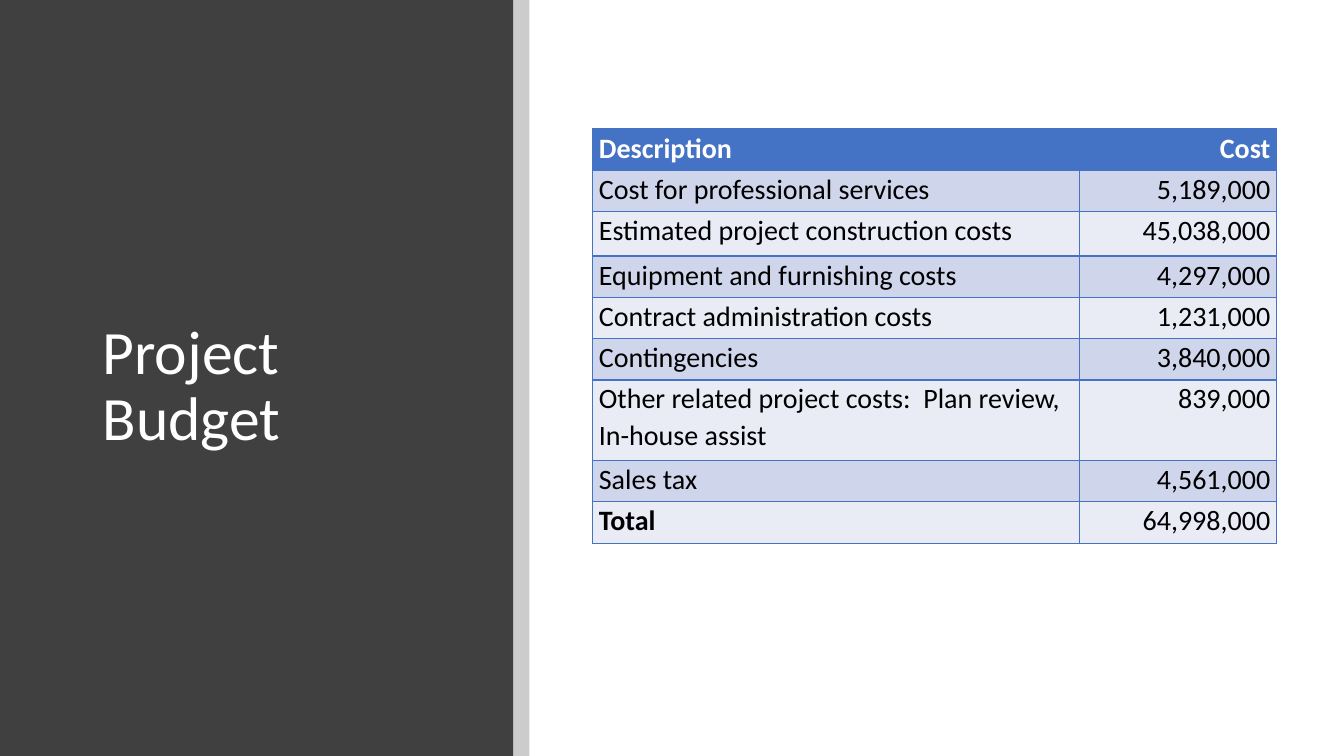
import pptx
import pptx.dml.color
import pptx.enum.shapes
import pptx.enum.text
import pptx.oxml
import pptx.oxml.ns
import pptx.util
from pptx.util import Inches

TITLE = "Project Budget"
BUDGET = [
    ("Description", "Cost"),
    ("Cost for professional services", "5,189,000"),
    ("Estimated project construction costs", "45,038,000"),
    ("Equipment and furnishing costs", "4,297,000"),
    ("Contract administration costs", "1,231,000"),
    ("Contingencies", "3,840,000"),
    ("Other related project costs:  Plan review, In-house assist", "839,000"),
    ("Sales tax", "4,561,000"),
    ("Total", "64,998,000"),
]
COLORS = {
    "panel": "404040",
    "strip": "000000",
    "header": "4472C4",
    "odd": "CFD5EA",
    "even": "E9EBF5",
    "light": "FFFFFF",
    "dark": "000000",
}
FONT = "Calibri"
PANEL_WIDTH, STRIP_WIDTH, SLIDE_HEIGHT = 5.09, 0.16, 7.5
COLUMN_WIDTHS = (4.83, 1.95)
ROW_HEIGHT = 0.41
TALL_ROWS = {2: 0.44, 6: 0.8}
ALIGN = pptx.enum.text.PP_ALIGN


def rgb(name):
    return pptx.dml.color.RGBColor.from_string(COLORS[name])


def write_text(frame, text, size=20, color="dark", bold=False, align=ALIGN.LEFT, spacing=1.07):
    paragraph = frame.paragraphs[0]
    paragraph.alignment = align
    paragraph.line_spacing = spacing
    run = paragraph.add_run()
    run.text = text
    run.font.name = FONT
    run.font.size = pptx.util.Pt(size)
    run.font.bold = bold
    run.font.color.rgb = rgb(color)


def add_band(slide, left, width, color):
    band = slide.shapes.add_shape(
        pptx.enum.shapes.MSO_SHAPE.RECTANGLE,
        Inches(left), 0, Inches(width), Inches(SLIDE_HEIGHT),
    )
    band.shadow.inherit = False
    band.fill.solid()
    band.fill.fore_color.rgb = rgb(color)
    band.line.fill.background()
    return band


def set_opacity(shape, percent):
    color = shape.fill._xPr.find(".//" + pptx.oxml.ns.qn("a:srgbClr"))
    alpha = pptx.oxml.parse_xml(
        f'<a:alpha {pptx.oxml.ns.nsdecls("a")} val="{percent * 1000}"/>'
    )
    color.append(alpha)


def set_borders(cell, color):
    properties = cell._tc.get_or_add_tcPr()
    for index, side in enumerate(("lnL", "lnR", "lnT", "lnB")):
        border = pptx.oxml.parse_xml(
            f'<a:{side} {pptx.oxml.ns.nsdecls("a")} w="12700"><a:solidFill>'
            f'<a:srgbClr val="{COLORS[color]}"/></a:solidFill></a:{side}>'
        )
        properties.insert(index, border)


def add_title(slide):
    box = slide.shapes.add_textbox(Inches(0.92), Inches(0.89), Inches(3.65), Inches(5.91))
    frame = box.text_frame
    frame.word_wrap = True
    frame.vertical_anchor = pptx.enum.text.MSO_ANCHOR.MIDDLE
    write_text(frame, TITLE, size=44, color="light", spacing=0.9)


def add_budget_table(slide):
    heights = [TALL_ROWS.get(index, ROW_HEIGHT) for index in range(len(BUDGET))]
    table = slide.shapes.add_table(
        len(BUDGET), len(COLUMN_WIDTHS), Inches(5.88), Inches(1.28),
        Inches(sum(COLUMN_WIDTHS)), Inches(sum(heights)),
    ).table
    for column, width in zip(table.columns, COLUMN_WIDTHS):
        column.width = Inches(width)
    for row_index, values in enumerate(BUDGET):
        table.rows[row_index].height = Inches(heights[row_index])
        is_header = row_index == 0
        fill = "header" if is_header else ("even", "odd")[row_index % 2]
        for column_index, value in enumerate(values):
            cell = table.cell(row_index, column_index)
            cell.margin_left = cell.margin_right = Inches(0.06)
            cell.margin_top = cell.margin_bottom = 0
            cell.fill.solid()
            cell.fill.fore_color.rgb = rgb(fill)
            set_borders(cell, "header")
            write_text(
                cell.text_frame, value,
                color="light" if is_header else "dark",
                bold=is_header or value == "Total",
                align=(ALIGN.LEFT, ALIGN.RIGHT)[column_index],
            )


def main():
    presentation = pptx.Presentation()
    presentation.slide_width = Inches(13.33)
    presentation.slide_height = Inches(SLIDE_HEIGHT)
    slide = presentation.slides.add_slide(presentation.slide_layouts[6])
    add_band(slide, 0, PANEL_WIDTH, "panel")
    add_title(slide)
    strip = add_band(slide, PANEL_WIDTH, STRIP_WIDTH, "strip")
    set_opacity(strip, 20)
    add_budget_table(slide)
    presentation.save("out.pptx")


if __name__ == "__main__":
    main()
